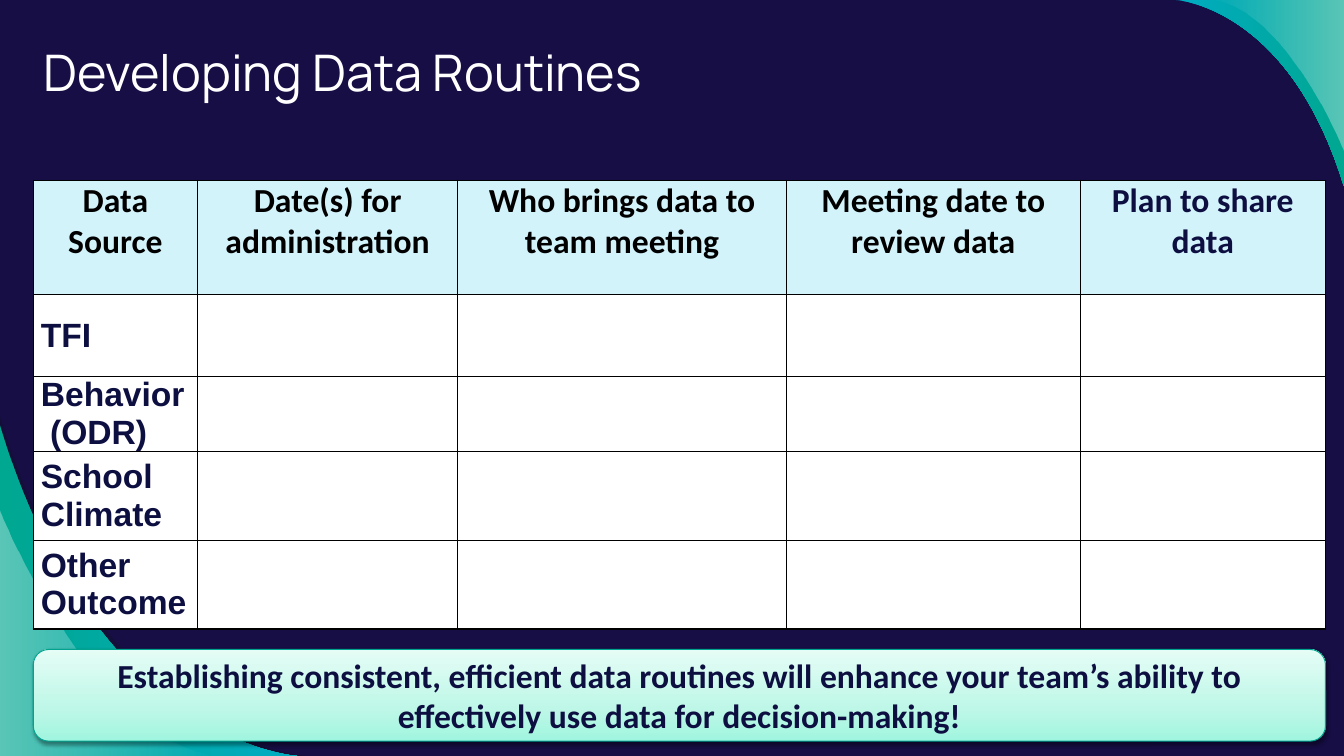
from dataclasses import dataclass

from lxml.etree import SubElement
from pptx import Presentation
from pptx.dml.color import RGBColor
from pptx.enum.shapes import MSO_SHAPE as Preset
from pptx.enum.text import MSO_ANCHOR as Anchor, PP_ALIGN as Align
from pptx.oxml.ns import qn
from pptx.util import Pt

NIGHT = RGBColor(0x16, 0x0E, 0x44)
DUSK = RGBColor(0x12, 0x10, 0x2F)
NAVY = RGBColor(0x0D, 0x0F, 0x41)
CYAN = RGBColor(0x00, 0xAC, 0xC2)
TEAL = RGBColor(0x00, 0xA7, 0x91)
EDGE = RGBColor(0x00, 0xA3, 0x8E)
ICE = RGBColor(0xD3, 0xF3, 0xFB)
MINTS = (RGBColor(0xA0, 0xF5, 0xDF), RGBColor(0xBE, 0xF7, 0xE7), RGBColor(0xE5, 0xFD, 0xF6))
WHITE = RGBColor(0xFF, 0xFF, 0xFF)
BLACK = RGBColor(0x00, 0x00, 0x00)

LEFT, WIDTH = 23.76, 923.04


@dataclass(frozen=True)
class Stop:
    position: int
    color: RGBColor
    opacity: int = 100


@dataclass(frozen=True)
class Swoosh:
    """A cubic curve closed through a slide corner."""
    curve: tuple
    corner: tuple
    stops: tuple


@dataclass(frozen=True)
class Column:
    heading: str
    width: float
    color: RGBColor = BLACK


@dataclass(frozen=True)
class Row:
    label: str
    height: float
    hang: float = 0


BOTTOM, TOP = (0, 540), (960, 0)
SWOOSHES = (
    Swoosh(((0, 297.4), (70.6, 532.1), (218.2, 540), (218.2, 540)), BOTTOM,
           (Stop(0, DUSK, 54),)),
    Swoosh(((212.4, 540), (212.4, 540), (68.4, 532.1), (0, 303.8)), BOTTOM,
           (Stop(0, TEAL), Stop(100, CYAN))),
    Swoosh(((0, 364.3), (0, 364.3), (65.5, 529.2), (155.5, 540)), BOTTOM,
           (Stop(0, WHITE, 36), Stop(100, WHITE, 0))),
    Swoosh(((840.2, 0), (840.2, 0), (920.9, 4.3), (960, 133.2)), TOP,
           (Stop(0, CYAN), Stop(100, TEAL))),
    Swoosh(((960, 107.3), (960, 107.3), (919.4, 6.5), (864.7, 0)), TOP,
           (Stop(0, WHITE, 0), Stop(100, WHITE, 36))),
)
COLUMNS = (
    Column("Data Source", 117.4),
    Column("Date(s) for administration", 185.8),
    Column("Who brings data to team meeting", 234.8),
    Column("Meeting date to review data", 209.8),
    Column("Plan to share data", 175.24, NAVY),
)
HEADER_HEIGHT = 81.5
ROWS = (
    Row("TFI", 58.4),
    Row("Behavior (ODR)", 52.9, hang=6.7),
    Row("School Climate", 63.5),
    Row("Other Outcome", 63.5),
)


def write_text(frame, text: str, *, font: str, size: float, color: RGBColor,
               bold: bool = False, align=Align.LEFT, hang: float = 0,
               spacing: float = 1.0) -> None:
    frame.word_wrap = True
    para = frame.paragraphs[0]
    para.alignment = align
    para.line_spacing = spacing
    if hang:
        properties = para._p.get_or_add_pPr()
        properties.set("marL", str(Pt(hang)))
        properties.set("indent", str(-Pt(hang)))
    span = para.add_run()
    span.text = text
    span.font.name, span.font.size, span.font.bold = font, Pt(size), bold
    span.font.color.rgb = color


def add_color(parent, color: RGBColor, opacity: int = 100) -> None:
    node = SubElement(parent, qn("a:srgbClr"), val=str(color))
    if opacity < 100:
        SubElement(node, qn("a:alpha"), val=str(opacity * 1000))


def fill_shape(shape, stops: tuple, angle: float = 0) -> None:
    """Fill plainly for one stop, with a gradient for more."""
    if len(stops) == 1:
        shape.fill.solid()
        shape.fill.fore_color.rgb = stops[0].color
        node = shape._element.spPr.find(qn("a:solidFill"))
        SubElement(node[0], qn("a:alpha"), val=str(stops[0].opacity * 1000))
        return
    shape.fill.gradient()
    shape.fill.gradient_angle = angle
    stop_list = shape._element.spPr.find(".//" + qn("a:gsLst"))
    for old in list(stop_list):
        stop_list.remove(old)
    for stop in stops:
        node = SubElement(stop_list, qn("a:gs"), pos=str(stop.position * 1000))
        add_color(node, stop.color, stop.opacity)


def draw_swoosh(page, swoosh: Swoosh) -> None:
    start, *bend = [tuple(map(Pt, point)) for point in swoosh.curve]
    builder = page.shapes.build_freeform(*start)
    builder.add_line_segments([bend[-1], tuple(map(Pt, swoosh.corner))], close=True)
    shape = builder.convert_to_shape()
    # Bend the first segment into the cubic curve
    segment = shape._element.spPr.find(".//" + qn("a:lnTo"))
    outline = segment.getparent()
    curve = SubElement(outline, qn("a:cubicBezTo"))
    for x, y in bend:
        SubElement(curve, qn("a:pt"), x=str(x - shape.left), y=str(y - shape.top))
    outline.replace(segment, curve)
    shape.shadow.inherit = False
    shape.line.fill.background()
    fill_shape(shape, swoosh.stops)


def format_cell(cell, fill: RGBColor, anchor) -> None:
    properties = cell._tc.get_or_add_tcPr()
    for side in ("lnL", "lnR", "lnT", "lnB"):
        line = SubElement(properties, qn(f"a:{side}"), w=str(Pt(1)))
        add_color(SubElement(line, qn("a:solidFill")), BLACK)
    cell.fill.solid()
    cell.fill.fore_color.rgb = fill
    cell.vertical_anchor = anchor
    cell.margin_left = cell.margin_right = Pt(5.4)
    cell.margin_top = cell.margin_bottom = 0


def draw_table(page) -> None:
    heights = [HEADER_HEIGHT] + [row.height for row in ROWS]
    table = page.shapes.add_table(len(heights), len(COLUMNS), Pt(LEFT), Pt(128.88),
                                  Pt(WIDTH), Pt(sum(heights))).table
    table.horz_banding = False
    for line, height in zip(table.rows, heights):
        line.height = Pt(height)
    for index, column in enumerate(COLUMNS):
        table.columns[index].width = Pt(column.width)
        cell = table.cell(0, index)
        format_cell(cell, ICE, Anchor.TOP)
        write_text(cell.text_frame, column.heading, font="Calibri", size=24,
                   color=column.color, bold=True, align=Align.CENTER)
        for number in range(1, len(heights)):
            format_cell(table.cell(number, index), WHITE, Anchor.MIDDLE)
    for number, row in enumerate(ROWS, start=1):
        write_text(table.cell(number, 0).text_frame, row.label, font="Arial", size=24,
                   color=NAVY, bold=True, hang=row.hang)


def draw_banner(page) -> None:
    banner = page.shapes.add_shape(Preset.ROUNDED_RECTANGLE, Pt(LEFT), Pt(463.9),
                                   Pt(WIDTH), Pt(65.5))
    fill_shape(banner, tuple(map(Stop, (0, 35, 100), MINTS)), 90)
    banner.line.color.rgb = EDGE
    banner.line.width = Pt(0.75)
    # Soft shadow straight below
    banner.shadow.inherit = False
    effects = banner._element.spPr.find(qn("a:effectLst"))
    shadow = SubElement(effects, qn("a:outerShdw"), blurRad=str(Pt(3.1)),
                        dist=str(Pt(1.6)), dir="5400000", rotWithShape="0")
    add_color(shadow, BLACK, 38)
    banner.text_frame.vertical_anchor = Anchor.MIDDLE
    write_text(banner.text_frame,
               "Establishing consistent, efficient data routines will enhance your team’s "
               "ability to effectively use data for decision-making!",
               font="Calibri", size=24, color=NAVY, bold=True, align=Align.CENTER)


def draw_title(page) -> None:
    title = page.shapes.title
    title.left, title.top, title.width, title.height = map(Pt, (LEFT, 25.9, 738.7, 66.2))
    frame = title.text_frame
    frame.margin_left = frame.margin_right = frame.margin_top = frame.margin_bottom = Pt(7.2)
    frame.vertical_anchor = Anchor.TOP
    write_text(frame, "Developing Data Routines", font="Manrope", size=36, color=WHITE,
               spacing=0.94)


def main() -> None:
    deck = Presentation()
    deck.slide_width, deck.slide_height = Pt(960), Pt(540)
    page = deck.slides.add_slide(deck.slide_layouts[5])
    page.background.fill.solid()
    page.background.fill.fore_color.rgb = NIGHT
    for swoosh in SWOOSHES:
        draw_swoosh(page, swoosh)
    draw_title(page)
    draw_table(page)
    draw_banner(page)
    deck.save("out.pptx")


if __name__ == "__main__":
    main()
